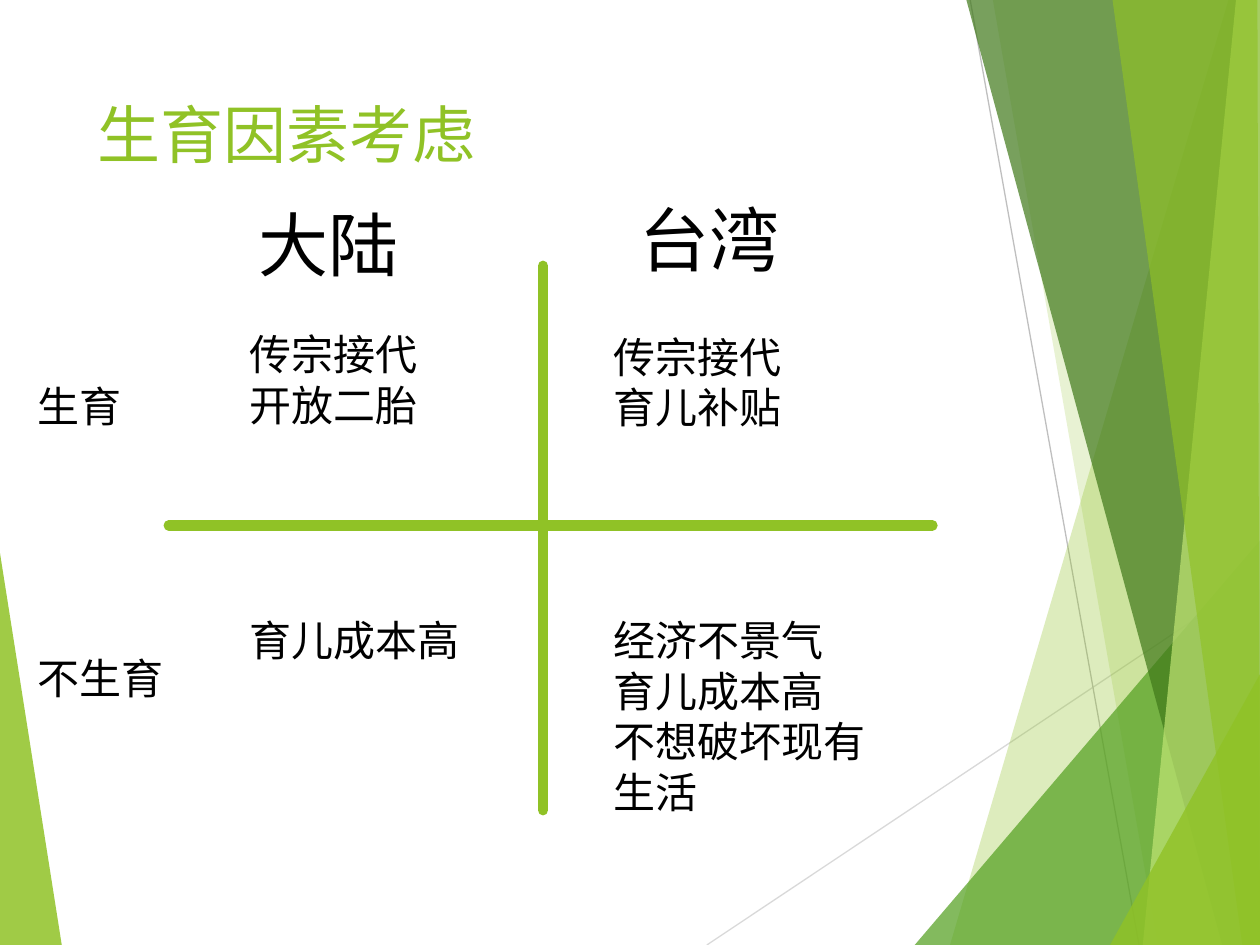
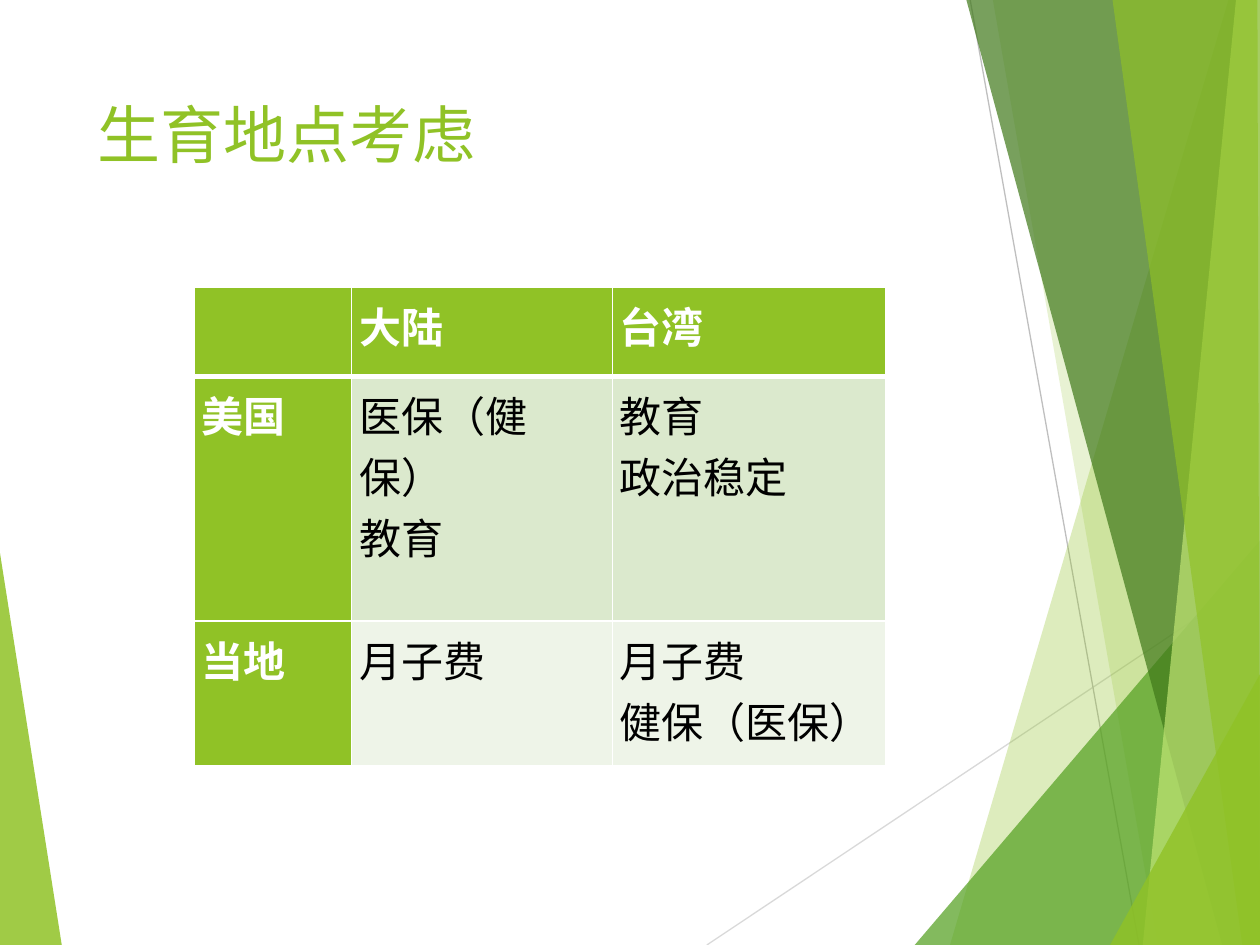
from dataclasses import dataclass

import pptx
import pptx.dml.color
import pptx.enum.shapes
import pptx.enum.text
import pptx.oxml.ns
import pptx.oxml.xmlchemy
import pptx.presentation
import pptx.shapes.connector
import pptx.slide
import pptx.table
import pptx.text.text
import pptx.util
from lxml import etree

RGBColor = pptx.dml.color.RGBColor
Point = tuple[int, int]

PX = 9144  # EMU in one px, at 100 px to the inch
SLIDE_WIDTH, SLIDE_HEIGHT = 1000, 750

FONT = "Roboto"
TITLE_SIZE, HEADING_SIZE, BODY_SIZE = 36, 40, 24
LINE_PITCH = 1.2
TABLE_LINE_PITCH = 1.45

LIME = RGBColor(0x90, 0xC2, 0x26)
GREEN = RGBColor(0x54, 0xA0, 0x21)
DARK_GREEN = RGBColor(0x3F, 0x78, 0x19)
PALE_LIME = RGBColor(0xC0, 0xE4, 0x74)
LIGHT_GREY = RGBColor(0xD9, 0xD9, 0xD9)
GREY = RGBColor(0xBF, 0xBF, 0xBF)
BLACK = RGBColor(0x00, 0x00, 0x00)
WHITE = RGBColor(0xFF, 0xFF, 0xFF)
BAND_FILLS = (RGBColor(0xDB, 0xE9, 0xCD), RGBColor(0xEE, 0xF4, 0xE8))


@dataclass(frozen=True)
class Facet:
    corners: tuple[Point, ...]
    color: RGBColor
    opacity: int


@dataclass(frozen=True)
class Line:
    start: Point
    end: Point
    color: RGBColor
    width: float
    cap: str = "flat"


@dataclass(frozen=True)
class Label:
    left: int
    top: int
    width: int
    height: int
    lines: tuple[str, ...]
    size: int = BODY_SIZE


LEFT_FACET = Facet(((0, 439), (49, 750), (0, 750)), LIME, 85)
BACKDROP_LINES = (
    Line((561, 750), (1000, 457), LIGHT_GREY, 0.75),
    Line((770, 0), (904, 750), GREY, 0.75),
)
RIGHT_FACETS = (
    Facet(((975, 0), (754, 750), (1000, 750), (1000, 0)), LIME, 30),
    Facet(((788, 0), (919, 750), (1000, 750), (1000, 0)), LIME, 20),
    Facet(((726, 750), (1000, 429), (1000, 750)), GREEN, 72),
    Facet(((767, 0), (970, 750), (1000, 750), (1000, 0)), DARK_GREEN, 70),
    Facet(((981, 0), (907, 750), (1000, 750), (1000, 0)), PALE_LIME, 70),
    Facet(((883, 0), (986, 750), (1000, 750), (998, 0)), LIME, 65),
    Facet(((881, 750), (1000, 535), (1000, 750)), LIME, 80),
)

QUADRANT_AXES = (
    Line((134, 417), (740, 417), LIME, 6, "rnd"),
    Line((431, 643), (431, 211), LIME, 6, "rnd"),
)
QUADRANT_LABELS = (
    Label(195, 150, 175, 77, ("大陆",), HEADING_SIZE),
    Label(498, 146, 175, 77, ("台湾",), HEADING_SIZE),
    Label(20, 294, 175, 50, ("生育",)),
    Label(20, 510, 175, 50, ("不生育",)),
    Label(188, 480, 213, 91, ("育儿成本高",)),
    Label(477, 255, 213, 131, ("传宗接代", "育儿补贴")),
    Label(477, 480, 252, 212, ("经济不景气", "育儿成本高", "不想破坏现有生活")),
    Label(188, 253, 213, 131, ("传宗接代", "开放二胎")),
)

TABLE_LEFT, TABLE_TOP = 154, 228
COLUMN_WIDTHS = (125, 207, 217)
ROW_HEIGHTS = (71, 194, 115)
CELL_MARGIN = 6
PLACE_ROWS = (
    ("", "大陆", "台湾"),
    ("美国", "医保（健保）\n教育", "教育\n政治稳定"),
    ("当地", "月子费", "月子费\n健保（医保）"),
)


def px(length: int) -> pptx.util.Emu:
    return pptx.util.Emu(length * PX)


def add_child(parent: etree._Element, tag: str, **attributes: str) -> etree._Element:
    return etree.SubElement(parent, pptx.oxml.ns.qn(tag), attributes)


def draw_facet(slide: pptx.slide.Slide, facet: Facet) -> None:
    builder = slide.shapes.build_freeform(*facet.corners[0], scale=PX)
    builder.add_line_segments(facet.corners[1:], close=True)
    shape = builder.convert_to_shape()
    shape.shadow.inherit = False
    shape.line.fill.background()
    shape.fill.solid()
    shape.fill.fore_color.rgb = facet.color
    color = next(shape.element.spPr.iter(pptx.oxml.ns.qn("a:srgbClr")))
    add_child(color, "a:alpha", val=str(facet.opacity * 1000))


def draw_line(slide: pptx.slide.Slide, line: Line) -> None:
    connector = slide.shapes.add_connector(
        pptx.enum.shapes.MSO_CONNECTOR.STRAIGHT,
        *(px(length) for length in line.start + line.end),
    )
    connector.line.color.rgb = line.color
    connector.line.width = pptx.util.Pt(line.width)
    connector.line._get_or_add_ln().set("cap", line.cap)
    add_child(connector.element.spPr, "a:effectLst")


def write_lines(
    frame: pptx.text.text.TextFrame,
    lines: tuple[str, ...],
    size: int,
    color: RGBColor,
    pitch: float = LINE_PITCH,
    bold: bool = False,
) -> None:
    """Fill a text frame, one paragraph a line, at a fixed line pitch."""
    frame.word_wrap = True
    frame.text = "\n".join(lines)
    for paragraph in frame.paragraphs:
        paragraph.alignment = pptx.enum.text.PP_ALIGN.LEFT
        paragraph.line_spacing = pptx.util.Pt(round(size * pitch, 1))
        paragraph.font.name = FONT
        paragraph.font.size = pptx.util.Pt(size)
        paragraph.font.color.rgb = color
        paragraph.font.bold = bold


def top_inset(size: int) -> pptx.util.Emu:
    return px(5 + size // 8)


def draw_label(slide: pptx.slide.Slide, label: Label) -> None:
    box = slide.shapes.add_textbox(
        px(label.left), px(label.top), px(label.width), px(label.height)
    )
    box.text_frame.margin_top = top_inset(label.size)
    write_lines(box.text_frame, label.lines, label.size, BLACK)


def add_themed_slide(
    presentation: pptx.presentation.Presentation, title_text: str
) -> pptx.slide.Slide:
    """Add a title-only slide with the green facets and its title."""
    slide = presentation.slides.add_slide(presentation.slide_layouts[5])
    draw_facet(slide, LEFT_FACET)
    for line in BACKDROP_LINES:
        draw_line(slide, line)
    for facet in RIGHT_FACETS:
        draw_facet(slide, facet)

    title = slide.shapes.title
    title.left, title.top = px(67), px(67)
    title.width, title.height = px(694), px(144)
    frame = title.text_frame
    frame.auto_size = pptx.enum.text.MSO_AUTO_SIZE.NONE
    frame.vertical_anchor = pptx.enum.text.MSO_ANCHOR.TOP
    frame.margin_top = top_inset(TITLE_SIZE)
    write_lines(frame, (title_text,), TITLE_SIZE, LIME)
    return slide


def set_borders(cell: pptx.table._Cell, row: int) -> None:
    """Draw white cell borders, thicker below the header row."""
    widths = {
        "a:lnL": 1,
        "a:lnR": 1,
        "a:lnT": 3 if row == 1 else 1,
        "a:lnB": 3 if row == 0 else 1,
    }
    properties = cell._tc.get_or_add_tcPr()
    for tag, width in widths.items():
        border = add_child(properties, tag, w=str(pptx.util.Pt(width)))
        fill = add_child(border, "a:solidFill")
        add_child(fill, "a:srgbClr", val=str(WHITE))


def draw_place_table(slide: pptx.slide.Slide) -> None:
    table = slide.shapes.add_table(
        len(ROW_HEIGHTS),
        len(COLUMN_WIDTHS),
        px(TABLE_LEFT),
        px(TABLE_TOP),
        px(sum(COLUMN_WIDTHS)),
        px(sum(ROW_HEIGHTS)),
    ).table
    for column, width in zip(table.columns, COLUMN_WIDTHS):
        column.width = px(width)
    for table_row, height in zip(table.rows, ROW_HEIGHTS):
        table_row.height = px(height)

    for row, texts in enumerate(PLACE_ROWS):
        for column, text in enumerate(texts):
            cell = table.cell(row, column)
            is_header = row == 0 or column == 0
            set_borders(cell, row)
            cell.fill.solid()
            cell.fill.fore_color.rgb = LIME if is_header else BAND_FILLS[row - 1]
            cell.margin_left = cell.margin_right = px(CELL_MARGIN)
            cell.margin_top = cell.margin_bottom = px(CELL_MARGIN)
            write_lines(
                cell.text_frame,
                tuple(text.split("\n")),
                BODY_SIZE,
                WHITE if is_header else BLACK,
                TABLE_LINE_PITCH,
                bold=is_header,
            )


def main() -> None:
    presentation = pptx.Presentation()
    presentation.slide_width = px(SLIDE_WIDTH)
    presentation.slide_height = px(SLIDE_HEIGHT)

    factors = add_themed_slide(presentation, "生育因素考虑")
    for axis in QUADRANT_AXES:
        draw_line(factors, axis)
    for label in QUADRANT_LABELS:
        draw_label(factors, label)

    places = add_themed_slide(presentation, "生育地点考虑")
    draw_place_table(places)

    presentation.save("out.pptx")


if __name__ == "__main__":
    main()
